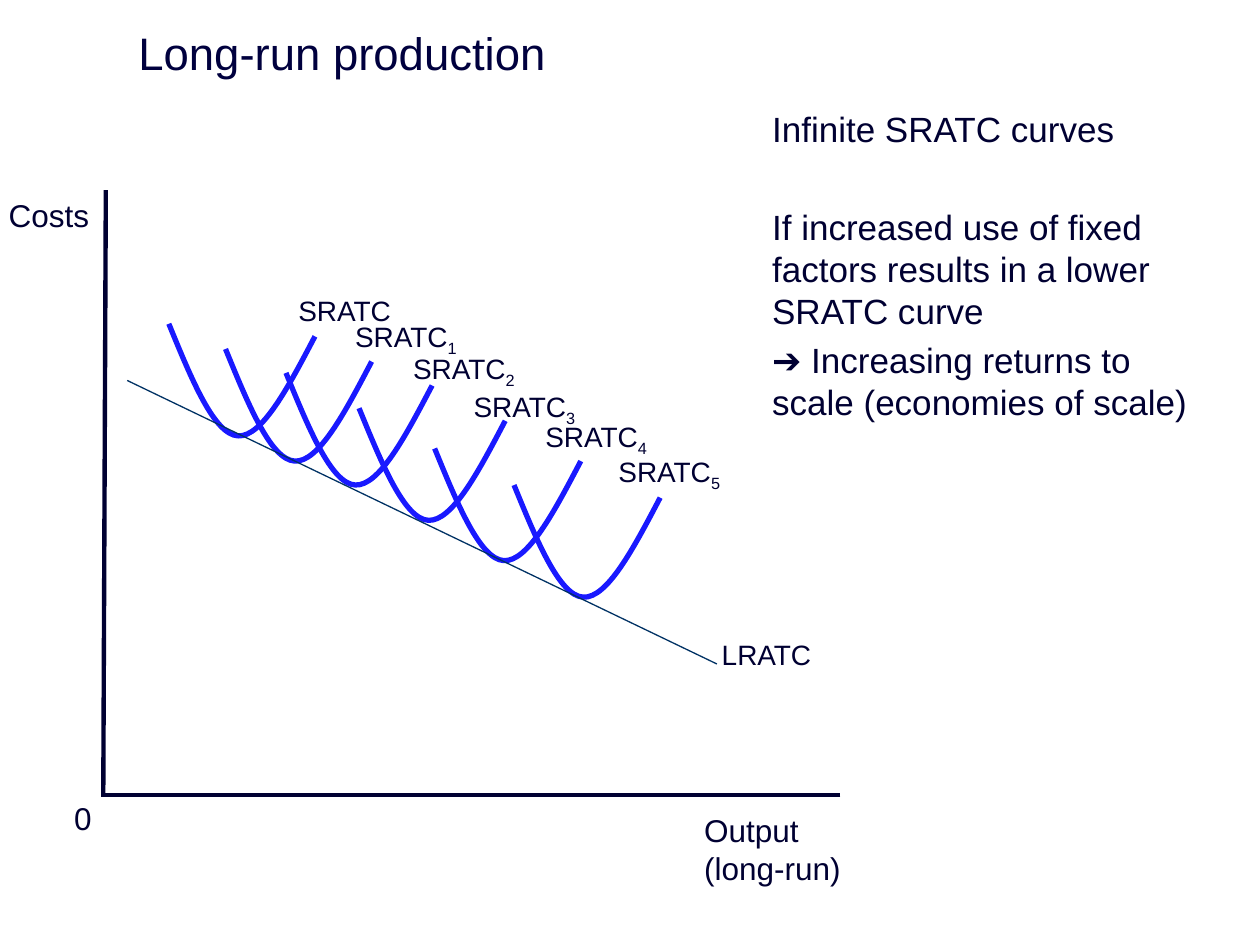
from lxml.etree import SubElement
from pptx import Presentation
from pptx.dml.color import RGBColor
from pptx.enum.shapes import MSO_CONNECTOR as Conn
from pptx.enum.text import MSO_ANCHOR as Anchor, MSO_AUTO_SIZE as Auto
from pptx.oxml.ns import qn
from pptx.util import Inches, Pt

TITLE = RGBColor(0x00, 0x00, 0x3E)
INK = RGBColor(0x00, 0x00, 0x32)
BLUE = RGBColor(0x19, 0x19, 0xFF)
TEAL = RGBColor(0x00, 0x32, 0x64)

# The slide is a grid of 100 columns by 75 rows.
CELL = Inches(0.1)

deck = Presentation()
deck.slide_width, deck.slide_height = 100 * CELL, 75 * CELL
slide = deck.slides.add_slide(deck.slide_layouts[6])
shapes = slide.shapes


def add_text(box, lines, size, color=INK, gaps=(), grow=True):
    """Each line is a (text, subscript) pair; gaps are points before the lines."""
    frame = shapes.add_textbox(*(round(n * CELL) for n in box)).text_frame
    frame.word_wrap = True
    frame.auto_size = Auto.SHAPE_TO_FIT_TEXT if grow else Auto.NONE
    for i, (text, sub) in enumerate(lines):
        para = frame.paragraphs[0] if i == 0 else frame.add_paragraph()
        if gaps and gaps[i]:
            para.space_before = Pt(gaps[i])
        for part, low in ((text, False), (sub, True)):
            if not part:
                continue
            run = para.add_run()
            run.text = part
            run.font.name, run.font.size = "Arial", Pt(size)
            run.font.color.rgb = color
            if low:
                run._r.get_or_add_rPr().set("baseline", "-25000")
    return frame


def add_line(ends, color, width):
    line = shapes.add_connector(Conn.STRAIGHT, *(round(n * CELL) for n in ends))
    line.line.color.rgb, line.line.width = color, Pt(width)
    SubElement(line._element.spPr, qn("a:effectLst"))


# Title and explanation
title = add_text((10, 1.6, 90, 5.1), [("Long-run production", "")], 26, TITLE, grow=False)
title.vertical_anchor = Anchor.MIDDLE
notes = [
    "Infinite SRATC curves",
    "If increased use of fixed factors results in a lower SRATC curve",
    "➔ Increasing returns to scale (economies of scale)",
]
add_text((60.3, 8, 37, 49.5), [(note, "") for note in notes], 20,
         gaps=(0, 32, 4), grow=False)

# Axes
add_line((8.4, 15.1, 8.2, 63), INK, 2.5)
add_line((66.7, 63.1, 8, 63.1), INK, 2.5)
add_text((54.9, 63.9, 14.1, 7.1), [("Output", ""), ("(long-run)", "")], 18)
add_text((4.9, 62.9, 6.4, 4), [("0", "")], 18)
add_text((-0.3, 15.1, 11.2, 4), [("Costs", "")], 18)

# One U shape: two cubic arcs, each given by two handles and an end
BEND = [(1.8, 4.4), (3.6, 8.8), (5.5, 8.9), (7.4, 9), (9.5, 5), (11.6, 1)]

# Start of each curve, then the corner and width of its label
CURVES = [
    ((13.4, 25.7), (22.7, 22.8, 11.6)),
    ((17.9, 27.7), (27.2, 24.9, 10.2)),
    ((22.7, 29.6), (31.8, 27.4, 10.5)),
    ((28.5, 32.4), (36.6, 30.4, 10.8)),
    ((34.5, 35.6), (42.3, 32.8, 10.5)),
    ((40.8, 38.5), (48.1, 35.6, 10.5)),
]
for i, ((x, y), label) in enumerate(CURVES):
    pen = shapes.build_freeform(round(x * CELL), round(y * CELL))
    pen.add_line_segments(
        [(round((x + dx) * CELL), round((y + dy) * CELL)) for dx, dy in BEND],
        close=False)
    curve = pen.convert_to_shape()
    # Turn every three straight steps into one cubic arc
    steps = list(curve._element.iter(qn("a:lnTo")))
    track = steps[0].getparent()
    for n in range(0, len(steps), 3):
        arc = SubElement(track, qn("a:cubicBezTo"))
        for step in steps[n:n + 3]:
            arc.append(step[0])
            track.remove(step)
    curve.shadow.inherit = False
    curve.fill.background()
    curve.line.color.rgb, curve.line.width = BLUE, Pt(3)
    add_text((*label, 3.7), [("SRATC", str(i) if i else "")], 16)

# Long-run curve
add_line((10.1, 30.2, 56.9, 52.7), TEAL, 0.75)
add_text((56.3, 50.1, 9.4, 3.7), [("LRATC", "")], 16)

deck.save("out.pptx")
